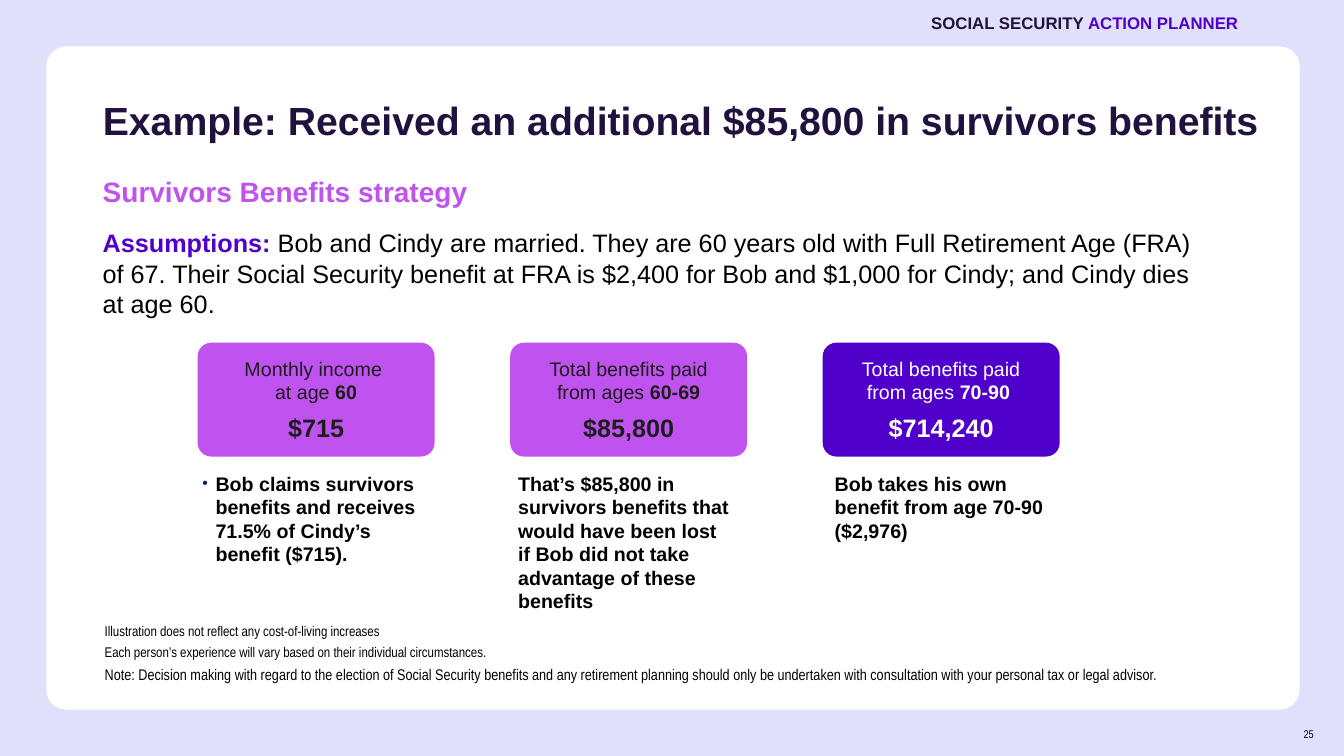
from lxml.etree import SubElement
from pptx import Presentation
from pptx.dml.color import RGBColor
from pptx.enum.shapes import MSO_SHAPE
from pptx.enum.text import MSO_ANCHOR, PP_ALIGN
from pptx.oxml.ns import qn
from pptx.util import Inches, Pt

LAVENDER = RGBColor(0xE0, 0xE0, 0xFB)
NAVY = RGBColor(0x20, 0x11, 0x3E)
INDIGO = RGBColor(0x4F, 0x00, 0xCA)
ORCHID = RGBColor(0xC0, 0x53, 0xEF)
CHARCOAL = RGBColor(0x1C, 0x1C, 0x1C)
BLACK = RGBColor(0, 0, 0)
WHITE = RGBColor(0xFF, 0xFF, 0xFF)

CARD_LEFT, CARD_PITCH = 1.96, 3.1
COLUMNS = [
    ("Monthly income ", "at age ", "60", "$715", ORCHID, CHARCOAL, (1.91, 4.63, 2.31, 1.3),
     "Bob claims survivors benefits and receives 71.5% of Cindy’s benefit ($715).", True),
    ("Total benefits paid", "from ages ", "60-69", "$85,800", ORCHID, CHARCOAL, (5.04, 4.63, 2.29, 1.44),
     "That’s $85,800 in survivors benefits that would have been lost if Bob did not take "
     "advantage of these benefits", False),
    ("Total benefits paid", "from ages ", "70-90 ", "$714,240", INDIGO, WHITE, (8.18, 4.63, 2.29, 1.21),
     "Bob takes his own benefit from age 70-90 ($2,976)", False),
]
FOOTNOTES = [
    ("Illustration does not reflect any cost-of-living increases", 10),
    ("Each person’s experience will vary based on their individual circumstances.", 10),
    ("Note: Decision making with regard to the election of Social Security benefits and any "
     "retirement planning should only be undertaken with consultation with your personal tax "
     "or legal advisor.", 11),
]


def add_run(paragraph, text, size, color, bold=False, font="Arial"):
    run = paragraph.add_run()
    run.text = text
    run.font.name = font
    run.font.size = Pt(size)
    run.font.bold = bold
    run.font.color.rgb = color


def add_text_box(slide, box, anchor=MSO_ANCHOR.TOP, align=PP_ALIGN.LEFT):
    frame = slide.shapes.add_textbox(*map(Inches, box)).text_frame
    frame.word_wrap = True
    frame.vertical_anchor = anchor
    frame.paragraphs[0].alignment = align
    return frame


def add_rounded_box(slide, box, color, radius):
    shape = slide.shapes.add_shape(MSO_SHAPE.ROUNDED_RECTANGLE, *map(Inches, box))
    shape.adjustments[0] = radius
    shape.shadow.inherit = False
    shape.fill.solid()
    shape.fill.fore_color.rgb = color
    shape.line.fill.background()
    return shape


def add_bullet(paragraph):
    properties = paragraph._p.get_or_add_pPr()
    properties.set("marL", str(Inches(0.13)))
    properties.set("indent", str(-Inches(0.13)))
    color = SubElement(properties, qn("a:buClr"))
    SubElement(color, qn("a:srgbClr"), val="001871")
    SubElement(properties, qn("a:buSzPct"), val="80000")
    SubElement(properties, qn("a:buFont"), typeface="Arial")
    SubElement(properties, qn("a:buChar"), char="•")


def add_title(slide, box):
    title = slide.shapes.title
    title.left, title.top, title.width, title.height = map(Inches, box)
    frame = title.text_frame
    frame.word_wrap = True
    frame.vertical_anchor = MSO_ANCHOR.TOP
    paragraph = frame.paragraphs[0]
    paragraph.alignment = PP_ALIGN.LEFT
    paragraph.line_spacing = 0.9
    add_run(paragraph, "Example: Received an additional $85,800 in survivors benefits", 28, NAVY, True)


def add_header(slide, box):
    paragraph = add_text_box(slide, box, MSO_ANCHOR.MIDDLE, PP_ALIGN.RIGHT).paragraphs[0]
    add_run(paragraph, "SOCIAL SECURITY", 12, NAVY, True)
    add_run(paragraph, " ACTION PLANNER", 12, INDIGO, True)


def add_subtitle(slide, box):
    paragraph = add_text_box(slide, box).paragraphs[0]
    add_run(paragraph, "Survivors Benefits strategy", 20, ORCHID, True)


def add_assumptions(slide, box):
    paragraph = add_text_box(slide, box).paragraphs[0]
    add_run(paragraph, "Assumptions: ", 18, INDIGO, True)
    add_run(paragraph, "Bob and Cindy are married. They are 60 years old with Full Retirement Age "
            "(FRA) of 67. Their Social Security benefit at FRA is $2,400 for Bob and $1,000 for "
            "Cindy; and Cindy dies at age 60.", 18, BLACK)


def add_card(slide, box, label, prefix, ages, amount, fill, color):
    frame = add_rounded_box(slide, box, fill, 0.12).text_frame
    frame.word_wrap = True
    frame.vertical_anchor = MSO_ANCHOR.MIDDLE
    heading, total = frame.paragraphs[0], frame.add_paragraph()
    heading.alignment = total.alignment = PP_ALIGN.CENTER
    heading.space_after = Pt(6)
    total.space_after = Pt(6)
    add_run(heading, label, 14, color)
    heading.add_line_break()
    add_run(heading, prefix, 14, color)
    add_run(heading, ages, 14, color, True)
    add_run(total, amount, 18, color, True)


def add_explanation(slide, box, text, bulleted):
    paragraph = add_text_box(slide, box).paragraphs[0]
    if bulleted:
        add_bullet(paragraph)
    add_run(paragraph, text, 14, BLACK, True)


def add_footnotes(slide, box):
    frame = add_text_box(slide, box, MSO_ANCHOR.BOTTOM)
    for index, (text, size) in enumerate(FOOTNOTES):
        paragraph = frame.add_paragraph() if index else frame.paragraphs[0]
        paragraph.space_after = Pt(3)
        add_run(paragraph, text, size, BLACK, font="Arial Narrow")


def add_page_number(slide, box):
    paragraph = add_text_box(slide, box, MSO_ANCHOR.MIDDLE, PP_ALIGN.RIGHT).paragraphs[0]
    add_run(paragraph, "25", 8, BLACK, font="Arial Narrow")


def main():
    presentation = Presentation()
    presentation.slide_width = Inches(13.33)
    presentation.slide_height = Inches(7.5)
    slide = presentation.slides.add_slide(presentation.slide_layouts.get_by_name("Title Only"))
    slide.background.fill.solid()
    slide.background.fill.fore_color.rgb = LAVENDER

    panel = add_rounded_box(slide, (0.46, 0.46, 12.43, 6.58), WHITE, 0.03)
    slide.shapes.title._element.addprevious(panel._element)
    add_title(slide, (0.92, 0.96, 11.88, 0.92))
    add_header(slide, (6.67, 0, 5.71, 0.45))
    add_subtitle(slide, (0.92, 1.68, 9.72, 0.57))
    add_assumptions(slide, (0.92, 2.21, 11.25, 1.21))
    for index, (*card, text_box, text, bulleted) in enumerate(COLUMNS):
        add_card(slide, (CARD_LEFT + index * CARD_PITCH, 3.4, 2.35, 1.13), *card)
        add_explanation(slide, text_box, text, bulleted)
    add_footnotes(slide, (0.94, 6.19, 11.25, 0.64))
    add_page_number(slide, (12.43, 7.08, 0.7, 0.4))
    presentation.save("out.pptx")


if __name__ == "__main__":
    main()
